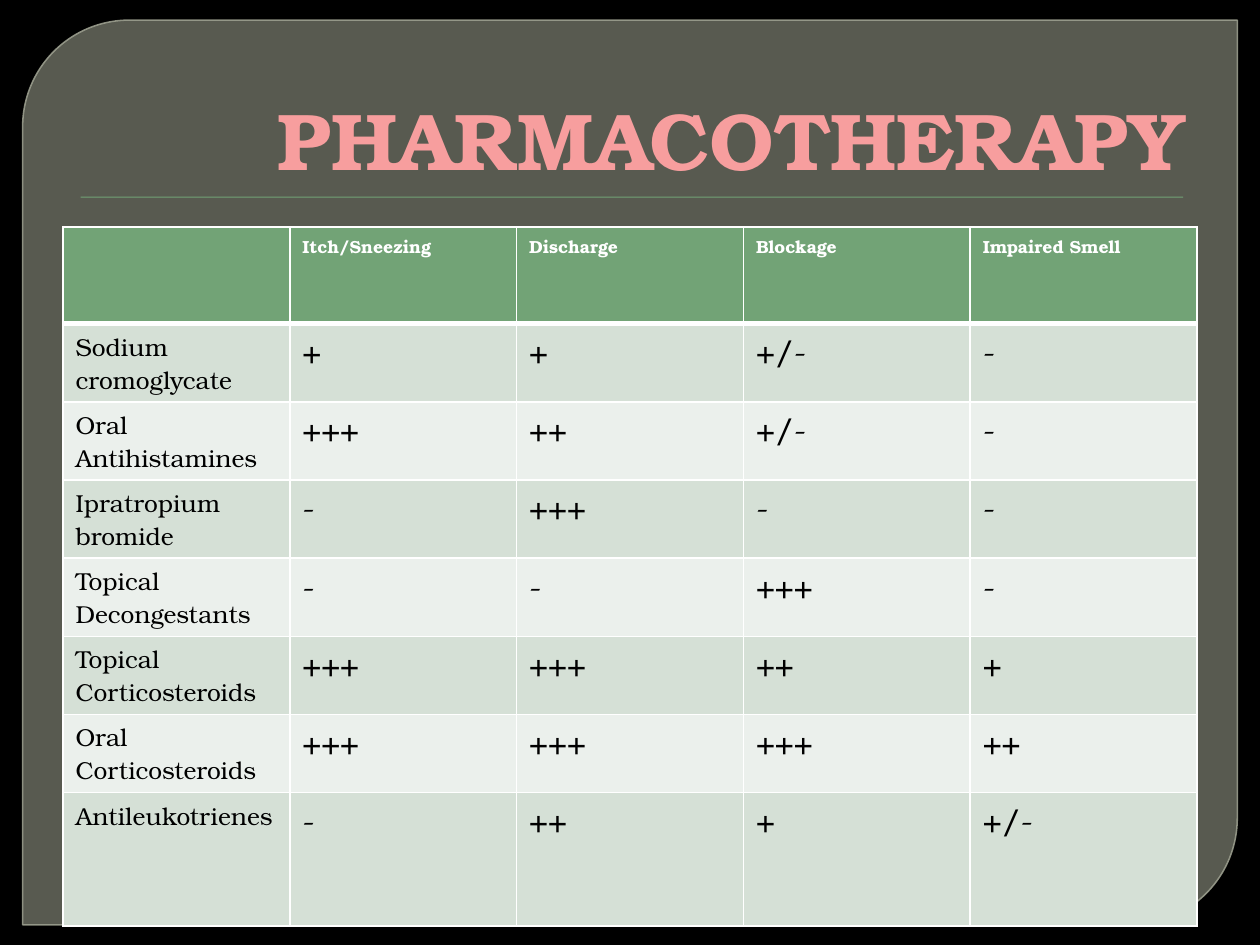
from typing import NamedTuple

import lxml.etree
import pptx
import pptx.dml.color
import pptx.enum.shapes
import pptx.enum.text
import pptx.oxml
import pptx.oxml.ns
import pptx.util

Inches = pptx.util.Inches
Pt = pptx.util.Pt
qn = pptx.oxml.ns.qn
FONT = "TeX Gyre Bonum"
COLORS = {
    "back": "000000", "panel": "888B7B", "edge": "9DA090", "green": "72A376",
    "odd": "D5E0D6", "even": "EBF0EC", "light": "FFFFFF", "dark": "000000",
}
GLOW = [(0, "7F4F4F"), (78, "F79E9E"), (100, "FFF5F5")]


class Drug(NamedTuple):
    name: str
    marks: tuple[str, ...]


HEADS = ("", "Itch/Sneezing", "Discharge", "Blockage", "Impaired Smell")
DRUGS = [
    Drug("Sodium cromoglycate", ("+", "+", "+/-", "-")),
    Drug("Oral Antihistamines", ("+++", "++", "+/-", "-")),
    Drug("Ipratropium bromide", ("-", "+++", "-", "-")),
    Drug("Topical Decongestants", ("-", "-", "+++", "-")),
    Drug("Topical Corticosteroids", ("+++", "+++", "++", "+")),
    Drug("Oral Corticosteroids", ("+++", "+++", "+++", "++")),
    Drug("Antileukotrienes", ("-", "++", "+", "+/-")),
]


def rgb(key: str) -> pptx.dml.color.RGBColor:
    return pptx.dml.color.RGBColor.from_string(COLORS[key])


def xml(body: str) -> lxml.etree._Element:
    """Parse one DrawingML element whose tag opens with '<a:'."""
    head, rest = body.split(" ", 1)
    return pptx.oxml.parse_xml(f"{head} {pptx.oxml.ns.nsdecls('a')} {rest}")


def fade(fill, share: int) -> None:
    """Give a solid fill an opacity in percent."""
    tint = fill._xPr.find(qn("a:solidFill"))[0]
    tint.append(xml(f'<a:alpha val="{share * 1000}"/>'))


def add_panel(slide) -> None:
    kind = pptx.enum.shapes.MSO_SHAPE.ROUND_2_DIAG_RECTANGLE
    panel = slide.shapes.add_shape(
        kind, Inches(0.18), Inches(0.16), Inches(9.64), Inches(7.18))
    panel.adjustments[0] = 0.118
    panel.adjustments[1] = 0
    panel.shadow.inherit = False
    panel.fill.solid()
    panel.fill.fore_color.rgb = rgb("panel")
    fade(panel.fill, 65)
    panel.line.width = Pt(0.87)
    panel.line.color.rgb = rgb("edge")
    fade(panel.line.fill, 88)


def add_rule(slide) -> None:
    rule = slide.shapes.add_shape(
        pptx.enum.shapes.MSO_SHAPE.RECTANGLE,
        Inches(0.64), Inches(1.56), Inches(8.75), Inches(0.01))
    rule.fill.solid()
    rule.fill.fore_color.rgb = rgb("green")
    rule.line.fill.background()
    rule.shadow.inherit = False
    rule._element.spPr.find(qn("a:effectLst")).append(xml(
        '<a:outerShdw blurRad="12700" dist="12700" dir="5400000">'
        '<a:srgbClr val="000000"><a:alpha val="75000"/></a:srgbClr>'
        "</a:outerShdw>"))


def set_title(slide, text: str) -> None:
    title = slide.shapes.title
    slide.shapes._spTree.append(title._element)  # in front of the panel
    title.left, title.top = Inches(0.5), Inches(0.28)
    title.width, title.height = Inches(9), Inches(1.25)
    frame = title.text_frame
    frame.text = text
    frame.vertical_anchor = pptx.enum.text.MSO_ANCHOR.BOTTOM
    para = frame.paragraphs[0]
    para.alignment = pptx.enum.text.PP_ALIGN.RIGHT
    para.font.name, para.font.size, para.font.bold = FONT, Pt(46), True
    props = para._p.pPr
    props.set("marL", str(Inches(0.06)))
    stops = "".join(
        f'<a:gs pos="{spot * 1000}"><a:srgbClr val="{tint}"/></a:gs>'
        for spot, tint in GLOW)
    props.find(qn("a:defRPr")).insert(0, xml(
        f'<a:gradFill rotWithShape="1"><a:gsLst>{stops}</a:gsLst>'
        '<a:lin ang="5400000" scaled="0"/></a:gradFill>'))


def set_cell(cell, text: str, size: int, ink: str, fill: str,
             base: int = 1, bold: bool = False) -> None:
    """Fill a cell; base is the width of its bottom border in points."""
    cell.text = text
    font = cell.text_frame.paragraphs[0].font
    font.name, font.size, font.bold = FONT, Pt(size), bold
    font.color.rgb = rgb(ink)
    props = cell._tc.get_or_add_tcPr()
    for side, width in (("L", 1), ("R", 1), ("T", 1), ("B", base)):
        props.append(xml(
            f'<a:ln{side} w="{Pt(width)}"><a:solidFill>'
            f'<a:srgbClr val="{COLORS["light"]}"/></a:solidFill></a:ln{side}>'))
    cell.fill.solid()
    cell.fill.fore_color.rgb = rgb(fill)


def add_grid(slide) -> None:
    frame = slide.shapes.add_table(
        len(DRUGS) + 1, len(HEADS),
        Inches(0.5), Inches(1.8), Inches(9), Inches(5.23))
    table = frame.table
    for row in table.rows:
        row.height = Inches(0.41)
    table.rows[0].height = Inches(0.77)
    table.rows[len(DRUGS)].height = Inches(1.06)
    for col, head in enumerate(HEADS):
        set_cell(table.cell(0, col), head, 10, "light", "green", 3, True)
    for row, drug in enumerate(DRUGS, 1):
        fill = "odd" if row % 2 else "even"
        set_cell(table.cell(row, 0), drug.name, 14, "dark", fill)
        for col, mark in enumerate(drug.marks, 1):
            set_cell(table.cell(row, col), mark, 18, "dark", fill)
    frame.height = Inches(5.23)


def main() -> None:
    deck = pptx.Presentation()
    deck.slide_width, deck.slide_height = Inches(10), Inches(7.5)
    slide = deck.slides.add_slide(deck.slide_layouts[5])
    slide.background.fill.solid()
    slide.background.fill.fore_color.rgb = rgb("back")
    add_panel(slide)
    add_rule(slide)
    set_title(slide, "PHARMACOTHERAPY")
    add_grid(slide)
    deck.save("out.pptx")


if __name__ == "__main__":
    main()
